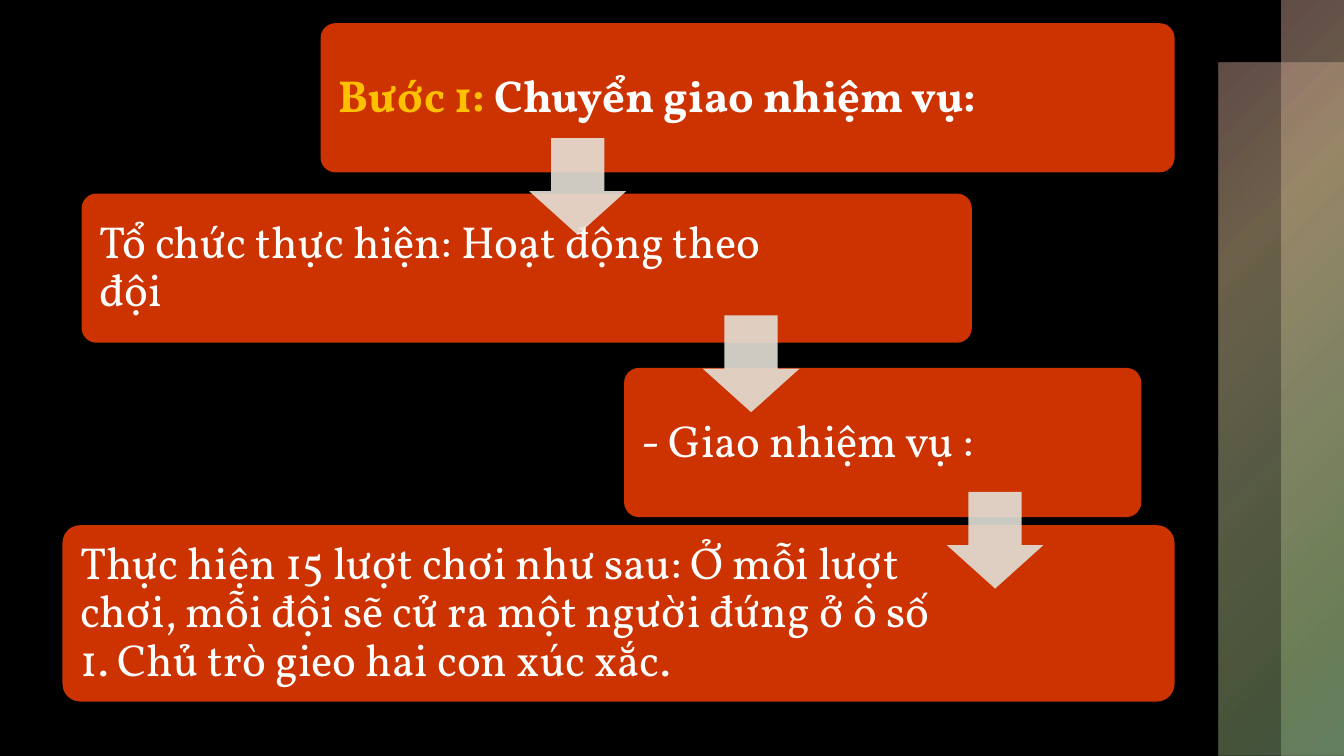
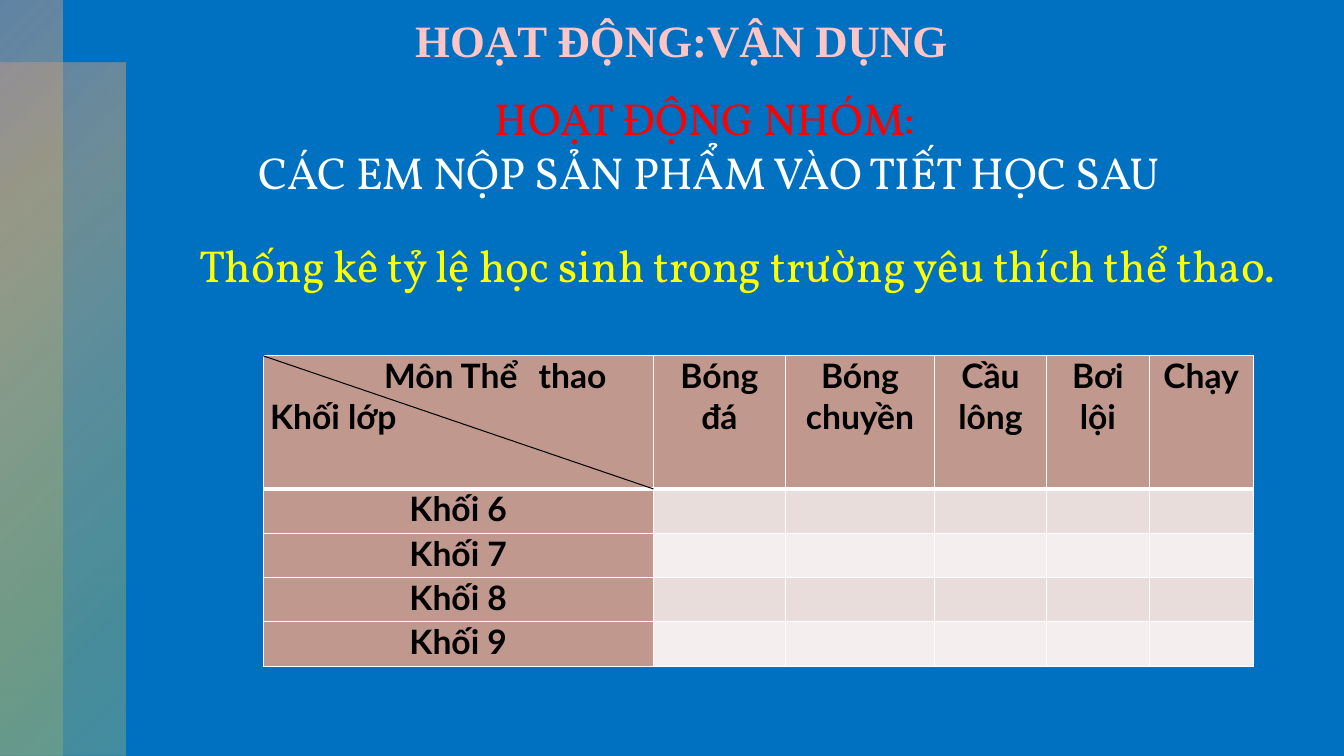
from lxml import etree
from pptx import Presentation
from pptx.dml.color import RGBColor
from pptx.enum import shapes, text
from pptx.oxml import ns
from pptx.util import Inches, Pt

BLACK = RGBColor(0x00, 0x00, 0x00)
WHITE = RGBColor(0xFF, 0xFF, 0xFF)
BLUE = RGBColor(0x00, 0x70, 0xC0)
BRICK = RGBColor(0xCC, 0x33, 0x00)
GOLD = RGBColor(0xFF, 0xC0, 0x00)
YELLOW = RGBColor(0xFF, 0xFF, 0x00)
RED = RGBColor(0xFF, 0x00, 0x00)
PINK = RGBColor(0xFF, 0xC5, 0xC5)
CLAY = RGBColor(0xC1, 0x98, 0x8D)
ROSE = RGBColor(0xE9, 0xDD, 0xDB)
PALE = RGBColor(0xF4, 0xEF, 0xEE)
SAND = RGBColor(0xE5, 0xE0, 0xD7)
CREAM = RGBColor(0xE3, 0xE1, 0xD7)
STONE = RGBColor(0xE0, 0xE1, 0xD8)
TAN = RGBColor(0xB6, 0xA1, 0x7C)
OLIVE = RGBColor(0xA4, 0xA6, 0x7E)
MOSS = RGBColor(0x91, 0xA9, 0x74)
FERN = RGBColor(0x86, 0xAB, 0x81)

WIDE, HIGH = 13.33, 7.5
STOPS = [(0, CLAY, 50), (25, TAN, 60), (50, OLIVE, 55), (81, MOSS, 50), (99, FERN, 50)]
SHAPE = shapes.MSO_SHAPE
LEFT, MID = text.PP_ALIGN.LEFT, text.PP_ALIGN.CENTER


def sub(node, tag, **attrs):
    """Add a drawing element with its attributes and return it."""
    return etree.SubElement(node, ns.qn("a:" + tag), {k: str(v) for k, v in attrs.items()})


def tint(node, color, alpha=100):
    """Add a colour with its opacity in percent."""
    part = sub(node, "srgbClr", val=color)
    if alpha < 100:
        sub(part, "alpha", val=alpha * 1000)


def write(frame, paras, font="Vollkorn", size=32, color=WHITE, bold=False,
          align=LEFT, gap=None, wrap=True, anchor=text.MSO_ANCHOR.TOP):
    """Fill a frame with paragraphs, each a list of (text, changes) runs."""
    frame.word_wrap = wrap
    frame.vertical_anchor = anchor
    for i, runs in enumerate(paras):
        para = frame.add_paragraph() if i else frame.paragraphs[0]
        para.alignment = align
        para.line_spacing = gap
        for words, diff in runs:
            run = para.add_run()
            run.text = words
            run.font.name = font
            run.font.size = Pt(size)
            run.font.bold = bold
            run.font.color.rgb = diff.get("color", color)
            if "track" in diff:
                run.font._element.set("spc", str(diff["track"]))


def label(slide, box, paras, **form):
    """Place a text box."""
    write(slide.shapes.add_textbox(*map(Inches, box)).text_frame, paras, **form)


def block(slide, kind, box, fill=None):
    """Place a flat preset shape without a line."""
    item = slide.shapes.add_shape(kind, *map(Inches, box))
    item.shadow.inherit = False
    item.line.fill.background()
    if fill is None:
        item.fill.background()
    else:
        item.fill.solid()
        item.fill.fore_color.rgb = fill
    return item


def band(slide, box):
    """Place a see-through gradient band."""
    item = block(slide, SHAPE.RECTANGLE, box)
    props = item._element.spPr
    grad = etree.Element(ns.qn("a:gradFill"), rotWithShape="1")
    stops = sub(grad, "gsLst")
    for pos, color, alpha in STOPS:
        tint(sub(stops, "gs", pos=pos * 1000), color, alpha)
    sub(sub(grad, "path", path="circle"), "fillToRect", r=100000, b=100000)
    props.replace(props.find(ns.qn("a:noFill")), grad)


def base(deck, color, right=False):
    """Add a slide with its ground and its pair of side bands."""
    slide = deck.slides.add_slide(deck.slide_layouts[6])
    slide.background.fill.solid()
    slide.background.fill.fore_color.rgb = color
    for width, top in ((1.24, 0.62), (0.62, 0)):
        band(slide, (WIDE - width if right else 0, top, width, HIGH - top))
    return slide


def step(slide, box, runs, inset):
    """Place one rounded step with its text held to the left."""
    item = block(slide, SHAPE.ROUNDED_RECTANGLE, box, BRICK)
    item.adjustments[0] = 0.1
    frame = item.text_frame
    frame.margin_left = frame.margin_top = frame.margin_bottom = Inches(0.13)
    frame.margin_right = Inches(inset)
    write(frame, [runs], gap=0.9, anchor=text.MSO_ANCHOR.MIDDLE)


def arrow(slide, left, top, color):
    """Place one down arrow, slightly see-through."""
    item = block(slide, SHAPE.DOWN_ARROW, (left, top, 0.96, 0.96), color)
    item.adjustments[0], item.adjustments[1] = 0.55, 0.45
    tone = item._element.spPr.find(ns.qn("a:solidFill"))[0]
    sub(tone, "alpha", val=90000)


def edge(cell, top, foot):
    """Draw white borders of a cell, with top and foot widths in points."""
    props = cell._tc.get_or_add_tcPr()
    for side, width in (("L", 1), ("R", 1), ("T", top), ("B", foot)):
        tint(sub(sub(props, "ln" + side, w=Pt(width)), "solidFill"), WHITE)


def grid(slide, left, top):
    """Place the sports table and the slash in its first cell."""
    cols = [3.87, 1.31, 1.48, 1.11, 1.02, 1.03]
    rows = [1.32] + [0.44] * 4
    heads = ["Bóng đá", "Bóng chuyền", "Cầu lông", "Bơi lội", "Chạy"]
    table = slide.shapes.add_table(len(rows), len(cols), Inches(left), Inches(top),
                                   Inches(sum(cols)), Inches(sum(rows))).table
    for col, width in zip(table.columns, cols):
        col.width = Inches(width)
    for row, height in zip(table.rows, rows):
        row.height = Inches(height)
    form = dict(font="Lato", size=24, color=BLACK, bold=True)
    for r in range(len(rows)):
        for c in range(len(cols)):
            cell = table.cell(r, c)
            edge(cell, 3 if r == 1 else 1, 3 if r == 0 else 1)
            cell.margin_left = cell.margin_right = Inches(0.07)
            cell.margin_top = cell.margin_bottom = 0
            cell.fill.solid()
            cell.fill.fore_color.rgb = CLAY if r * c == 0 else ROSE if r % 2 else PALE
            if r == 0 and c:
                write(cell.text_frame, [[(heads[c - 1], {})]], align=MID, **form)
            elif r:
                words = f"Khối {r + 5}" if c == 0 else ""
                write(cell.text_frame, [[(words, {})] if words else []], align=MID, **form)
    frame = table.cell(0, 0).text_frame
    write(frame, [[("Môn Thể", {}), (" ", {"track": 930}), ("thao", {})],
                  [("Khối lớp", {})]], **form)
    frame.paragraphs[0]._p.get_or_add_pPr().set("marL", str(Inches(1.13)))
    slash = slide.shapes.add_connector(
        shapes.MSO_CONNECTOR.STRAIGHT, Inches(left), Inches(top),
        Inches(left + cols[0]), Inches(top + rows[0]))
    slash.line.color.rgb = BLACK
    slash.line.width = Pt(0.75)
    sub(slash._element.spPr, "effectLst")


def task(deck):
    """Build the slide of steps joined by arrows."""
    slide = base(deck, BLACK, right=True)
    step(slide, (3.18, 0.23, 8.47, 1.48),
         [("Bước 1: ", {"color": GOLD}), ("Chuyển giao nhiệm vụ:", {})], 1.71)
    for run in slide.shapes[-1].text_frame.paragraphs[0].runs:
        run.font.bold = True
    step(slide, (0.81, 1.92, 8.83, 1.48),
         [("Tổ chức thực hiện: Hoạt động theo đội", {})], 1.84)
    step(slide, (6.19, 3.65, 5.13, 1.48), [("- Giao nhiệm vụ :", {})], 1.12)
    step(slide, (0.62, 5.21, 11.03, 1.75),
         [("Thực hiện 15 lượt chơi như sau: Ở mỗi lượt chơi, mỗi đội sẽ cử ra "
           "một người đứng ở ô số 1. Chủ trò gieo hai con xúc xắc.", {})], 2.26)
    for left, top, color in ((5.25, 1.37, SAND), (6.97, 3.13, CREAM), (9.39, 4.88, STONE)):
        arrow(slide, left, top, color)


def apply(deck):
    """Build the slide with the headings and the table."""
    slide = base(deck, BLUE)
    label(slide, (1.88, 2.31, 11.23, 0.64),
          [[("Thống kê tỷ lệ học sinh trong trường yêu thích thể thao.", {})]], color=YELLOW)
    label(slide, (1.77, 0.85, 10.54, 1.18),
          [[("HOẠT ĐỘNG NHÓM: ", {"color": RED})],
           [("CÁC EM NỘP SẢN PHẨM VÀO TIẾT HỌC SAU", {})]], align=MID)
    grid(slide, 2.61, 3.53)
    label(slide, (4.02, 0.08, 5.53, 0.64), [[("HOẠT ĐỘNG:VẬN DỤNG", {})]],
          font="Times New Roman", color=PINK, bold=True, wrap=False)


def main():
    """Build and save the deck."""
    deck = Presentation()
    deck.slide_width, deck.slide_height = Inches(WIDE), Inches(HIGH)
    task(deck)
    apply(deck)
    deck.save("out.pptx")


if __name__ == "__main__":
    main()
